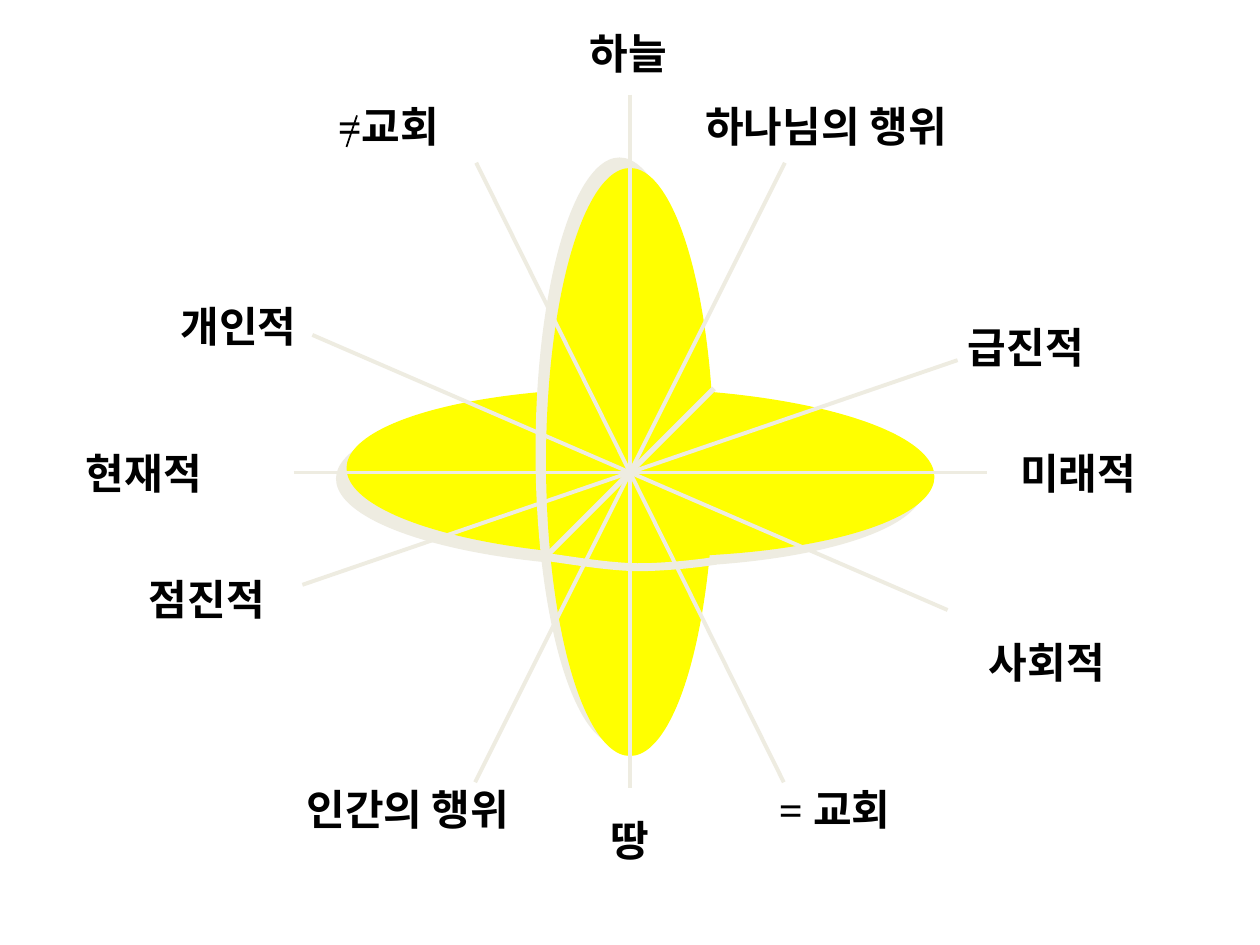
from dataclasses import dataclass
from lxml.etree import SubElement
from pptx import Presentation
from pptx.dml.color import RGBColor
from pptx.enum.shapes import MSO_CONNECTOR as Connector, MSO_SHAPE as Preset
from pptx.enum.text import MSO_AUTO_SIZE as AutoSize, PP_ALIGN as Align
from pptx.oxml.ns import qn
from pptx.slide import Slide
from pptx.util import Inches, Pt

COLORS = {"petal": "FFFF00", "ray": "EEECE1", "text": "000000"}
LABEL_FONT = {"name": "Times New Roman", "size": Pt(24), "bold": True}
LABEL_FRAME = {"word_wrap": True, "auto_size": AutoSize.SHAPE_TO_FIT_TEXT}
GRID = 12
LABEL_ROWS = 6
CENTER = (60, 45)


@dataclass
class Petal:
    column: float
    row: float
    rotation: float
    shadow_angle: int


@dataclass
class Ray:
    reach_x: float
    reach_y: float
    center: tuple[float, float] = CENTER
    weight: float = 2.25
    color: str = "ray"


@dataclass
class Label:
    text: str
    column: int
    row: int
    columns: int = 16


PETALS = [Petal(53, 17, 270.9, 135), Petal(52, 16, 0, 225)]
RAYS = [
    Ray(0, 33, center=(60, 42)),
    Ray(33, 0, center=(61, 45)),
    Ray(30.25, 13.1),
    Ray(14.65, 29.5),
    Ray(-31.2, 10.7),
    Ray(-14.75, 29.5),
    Ray(-8, 8, weight=3),
]
NOT_EQUAL_SLASH = Ray(-0.5, 1.5, center=(33.5, 12.5), weight=1, color="text")
LABELS = [
    Label("하늘", 55, 2, 21),
    Label("하나님의 행위", 66, 9, 35),
    Label("급진적", 91, 30, 35),
    Label("미래적", 96, 42, 35),
    Label("사회적", 93, 60, 35),
    Label("= 교회", 73, 74),
    Label("땅", 57, 77),
    Label("인간의 행위", 28, 74, 27),
    Label("점진적", 13, 54),
    Label("현재적", 7, 42),
    Label("개인적", 16, 28),
    Label("=교회", 31, 9),
]
FRONT_EDGE = [
    [(4.33, 4.42), (4.55, 4.45), (4.78, 4.49), (5, 4.5)],
    [(5, 4.5), (5.22, 4.51), (5.57, 4.47), (5.68, 4.45)],
]
CURVE_STEPS = 12


def cells(count: float) -> int:
    return Inches(count / GRID)


def color(name: str) -> RGBColor:
    return RGBColor.from_string(COLORS[name])


def style_line(shape, name: str, weight: float) -> None:
    shape.line.color.rgb = color(name)
    shape.line.width = Pt(weight)


def add_petal(slide: Slide, petal: Petal) -> None:
    shape = slide.shapes.add_shape(
        Preset.OVAL, cells(petal.column), cells(petal.row), cells(16), cells(56))
    shape.rotation = petal.rotation
    shape.fill.solid()
    shape.fill.fore_color.rgb = color("petal")
    shape.line.fill.background()
    shape.shadow.inherit = False
    effects = shape._element.spPr.find(qn("a:effectLst"))
    shadow = SubElement(effects, qn("a:outerShdw"), {
        "blurRad": "0", "dist": str(Pt(8.5)),
        "dir": str(petal.shadow_angle * 60000), "algn": "ctr", "rotWithShape": "0"})
    SubElement(shadow, qn("a:srgbClr"), val=COLORS["ray"])


def add_ray(slide: Slide, ray: Ray) -> None:
    x, y = ray.center
    connector = slide.shapes.add_connector(
        Connector.STRAIGHT,
        cells(x - ray.reach_x), cells(y - ray.reach_y),
        cells(x + ray.reach_x), cells(y + ray.reach_y))
    style_line(connector, ray.color, ray.weight)
    SubElement(connector._element.spPr, qn("a:effectLst"))


def add_label(slide: Slide, label: Label) -> None:
    box = slide.shapes.add_textbox(
        cells(label.column), cells(label.row), cells(label.columns), cells(LABEL_ROWS))
    frame = box.text_frame
    for name, value in LABEL_FRAME.items():
        setattr(frame, name, value)
    paragraph = frame.paragraphs[0]
    paragraph.alignment = Align.LEFT
    run = paragraph.add_run()
    run.text = label.text
    for name, value in LABEL_FONT.items():
        setattr(run.font, name, value)
    run.font.color.rgb = color("text")


def curve_point(controls: list, t: float) -> tuple[float, float]:
    weights = ((1 - t) ** 3, 3 * t * (1 - t) ** 2, 3 * t ** 2 * (1 - t), t ** 3)
    return (sum(w * x for w, (x, _) in zip(weights, controls)),
            sum(w * y for w, (_, y) in zip(weights, controls)))


def add_front_edge(slide: Slide) -> None:
    points = [curve_point(controls, step / CURVE_STEPS)
              for controls in FRONT_EDGE for step in range(1, CURVE_STEPS + 1)]
    start_x, start_y = FRONT_EDGE[0][0]
    builder = slide.shapes.build_freeform(
        Inches(start_x), Inches(start_y))
    builder.add_line_segments([(Inches(x), Inches(y)) for x, y in points], close=False)
    shape = builder.convert_to_shape()
    shape.fill.background()
    style_line(shape, "ray", 4.5)
    shape.shadow.inherit = False


def main() -> None:
    presentation = Presentation()
    presentation.slide_width = cells(120)
    presentation.slide_height = cells(90)
    slide = presentation.slides.add_slide(presentation.slide_layouts[6])
    for petal in PETALS:
        add_petal(slide, petal)
    for ray in RAYS:
        add_ray(slide, ray)
    for label in LABELS:
        add_label(slide, label)
    add_ray(slide, NOT_EQUAL_SLASH)
    add_front_edge(slide)
    presentation.save("out.pptx")


if __name__ == "__main__":
    main()
